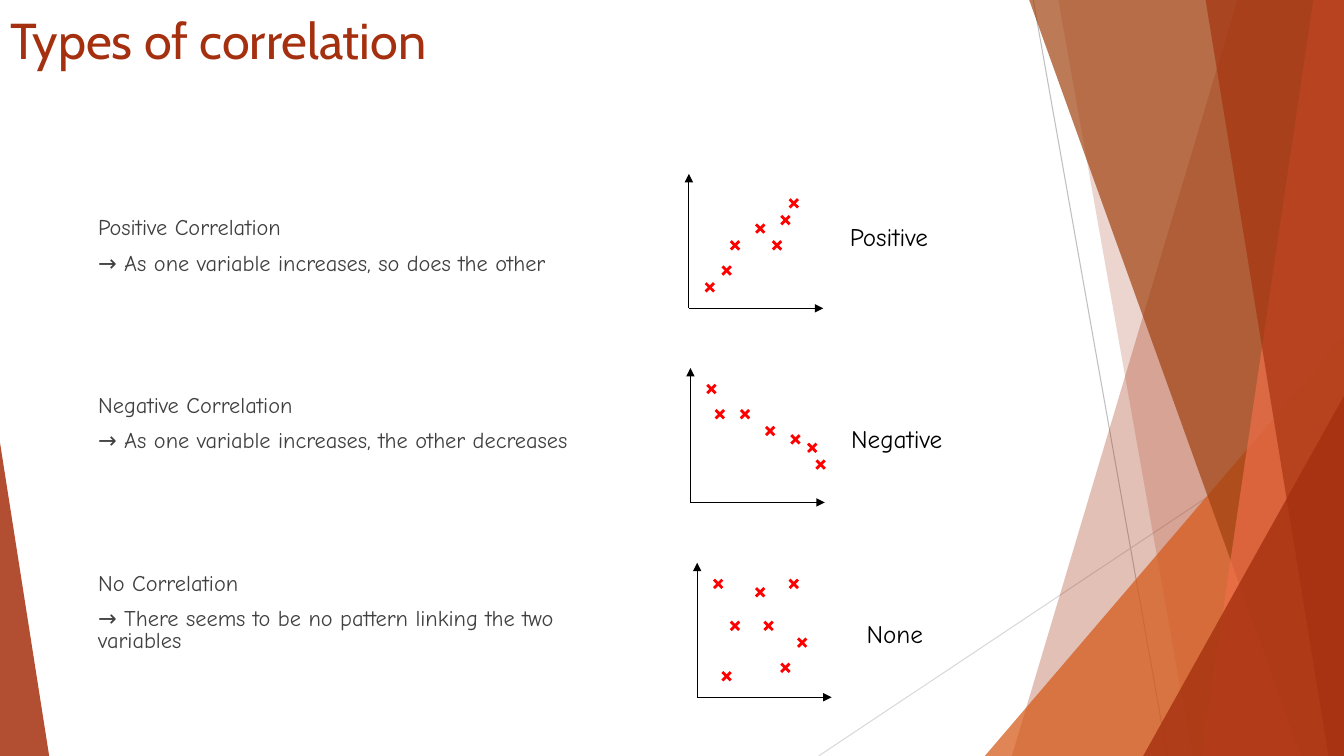
import pptx
import pptx.util
import pptx.dml.color
import pptx.enum.shapes
import pptx.enum.text
import pptx.oxml
import pptx.oxml.ns

Cm = pptx.util.Cm
Pt = pptx.util.Pt
qn = pptx.oxml.ns.qn
sub = pptx.oxml.xmlchemy.OxmlElement

tints = {
    "rust": "A5300F", "orange": "D55816", "brown": "A04210", "coral": "EE6E4A",
    "mist": "D9D9D9", "silver": "BFBFBF", "ink": "404040", "black": "000000",
    "red": "FF0000",
}
wide, high = 33.87, 19.05

deck = pptx.Presentation()
deck.slide_width, deck.slide_height = Cm(wide), Cm(high)
slide = deck.slides.add_slide(deck.slide_layouts[1])
shapes = slide.shapes


def draw_line(x1, y1, x2, y2, tint, width, arrow=False):
    line = shapes.add_connector(
        pptx.enum.shapes.MSO_CONNECTOR.STRAIGHT, Cm(x1), Cm(y1), Cm(x2), Cm(y2))
    line.line.width = Pt(width)
    line.line.color.rgb = pptx.dml.color.RGBColor.from_string(tints[tint])
    if arrow:
        tail = sub("a:tailEnd")
        tail.set("type", "triangle")
        line.line._get_or_add_ln().append(tail)
    line._element.spPr.append(sub("a:effectLst"))


def add_run(par, text, font, size, tint):
    run = par.add_run()
    run.text = text
    run.font.name = font
    run.font.size = Pt(size)
    run.font.color.rgb = pptx.dml.color.RGBColor.from_string(tints[tint])


draw_line(26.04, 0, 29.42, high, "silver", 0.75)
draw_line(wide, 10.23, 20.63, high, "mist", 0.75)

panes = [
    ("rust", 30, "band", (31.19, 25.5)),
    ("rust", 20, "band", (26.67, 30.05)),
    ("orange", 72, "right", (9.05, 10.58)),
    ("brown", 70, "band", (25.93, 32.79)),
    ("coral", 70, "band", (33.1, 30.28)),
    ("rust", 65, "band", (30.38, 33.48)),
    ("rust", 80, "right", (5.06, 9.07)),
    ("rust", 85, "left", (1.24, 7.9)),
]
for tint, alpha, kind, size in panes:
    if kind == "band":
        top, foot = size
        form = shapes.build_freeform(Cm(top), Cm(-0.02))
        form.add_line_segments(
            [(Cm(wide), Cm(-0.02)), (Cm(wide), Cm(high)), (Cm(foot), Cm(high))])
        pane = form.convert_to_shape()
    else:
        across, tall = size
        left = wide - across if kind == "right" else 0
        pane = shapes.add_shape(
            pptx.enum.shapes.MSO_SHAPE.ISOSCELES_TRIANGLE,
            Cm(left), Cm(high - tall), Cm(across), Cm(tall))
        pane.adjustments[0] = 1 if kind == "right" else 0
    pane.shadow.inherit = False
    pane.line.fill.background()
    pane.fill.solid()
    pane.fill.fore_color.rgb = pptx.dml.color.RGBColor.from_string(tints[tint])
    clear = sub("a:alpha")
    clear.set("val", str(alpha * 1000))
    pane._element.spPr.find(qn("a:solidFill"))[0].append(clear)

title = shapes.title
title.left, title.top, title.width, title.height = Cm(0), Cm(0), Cm(23.88), Cm(1.98)
frame = title.text_frame
frame.auto_size = pptx.enum.text.MSO_AUTO_SIZE.NONE
frame.vertical_anchor = pptx.enum.text.MSO_ANCHOR.MIDDLE
frame.paragraphs[0].alignment = pptx.enum.text.PP_ALIGN.LEFT
add_run(frame.paragraphs[0], "Types of correlation", "Cabin", 36, "rust")

body = slide.placeholders[1]
body.left, body.top, body.width, body.height = Cm(1.27), Cm(5.38), Cm(13.97), Cm(12.4)
frame = body.text_frame
frame.auto_size = pptx.enum.text.MSO_AUTO_SIZE.NONE
frame.vertical_anchor = pptx.enum.text.MSO_ANCHOR.TOP
notes = [
    ("Positive Correlation", 0),
    ("→ As one variable increases, so does the other", 10),
    ("Negative Correlation", 86.2),
    ("→ As one variable increases, the other decreases", 10),
    ("No Correlation", 86.2),
    ("→ There seems to be no pattern linking the two variables", 10),
]
for rank, (text, gap) in enumerate(notes):
    par = frame.add_paragraph() if rank else frame.paragraphs[0]
    par.line_spacing = 0.8
    par.space_before = Pt(gap)
    props = par._p.get_or_add_pPr()
    props.set("marL", str(Cm(0.95)))
    props.set("indent", "0")
    props.append(sub("a:buNone"))
    add_run(par, text, "Comic Neue", 16, "ink")

cell = 2.54 / 12
plots = [
    ("Positive", 17.36, 7.77, 21.17, 5.44,
     [(2, 3), (4, 5), (5, 8), (10, 8), (8, 10), (12, 13), (11, 11)]),
    ("Negative", 17.4, 12.66, 21.2, 10.54,
     [(2, 14), (3, 11), (6, 11), (9, 9), (12, 8), (14, 7), (15, 5)]),
    ("None", 17.57, 17.57, 21.59, 15.45,
     [(3, 3), (4, 9), (10, 4), (11, 14), (8, 9), (12, 7), (2, 14), (7, 13)]),
]
for name, x, y, left, top, marks in plots:
    draw_line(x, y, x, y - 16 * cell, "black", 0.75, True)
    draw_line(x, y, x + 16 * cell, y, "black", 0.75, True)
    for col, row in marks:
        west, north = x + col * cell, y - row * cell
        east, south = west + cell, north + cell
        draw_line(west, north, east, south, "red", 2)
        draw_line(east, north, west, south, "red", 2)
    label = shapes.add_textbox(Cm(left), Cm(top), Cm(3.18), Cm(1.02))
    label.text_frame.word_wrap = True
    add_run(label.text_frame.paragraphs[0], name, "Comic Neue", 18, "black")

deck.save("out.pptx")
